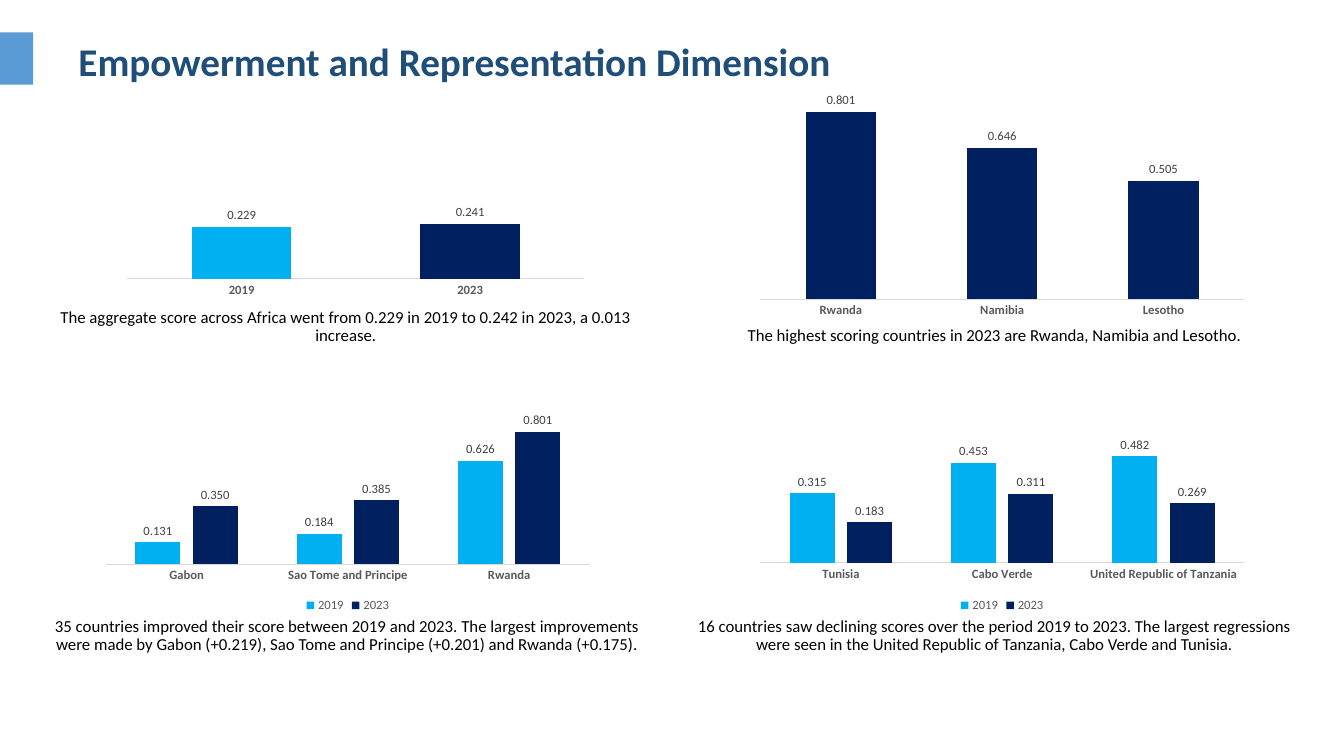
"""Build the Empowerment and Representation Dimension slide."""
from pptx import Presentation
from pptx.chart.data import CategoryChartData as Data
from pptx.dml.color import RGBColor as RGB
from pptx.enum.chart import XL_CHART_TYPE as Kind, XL_LABEL_POSITION as Spot
from pptx.enum.chart import XL_LEGEND_POSITION as Side, XL_TICK_MARK as Tick
from pptx.enum.shapes import MSO_SHAPE as Form
from pptx.enum.text import MSO_ANCHOR as Anchor, PP_ALIGN as Align
from pptx.util import Inches, Pt

TITLE = "Empowerment and Representation Dimension"
NOTES = [
    (0.3, 0.93, 6.26, 2.54, "The aggregate score across Africa went from 0.229 in 2019 "
     "to 0.242 in 2023, a 0.013 increase."),
    (0.33, 3.61, 6.23, 2.93, "35 countries improved their score between 2019 and 2023. "
     "The largest improvements were made by Gabon (+0.219), Sao Tome and Principe "
     "(+0.201) and Rwanda (+0.175)."),
    (6.75, 0.93, 6.23, 2.54, "The highest scoring countries in 2023 are Rwanda, "
     "Namibia and Lesotho."),
    (6.75, 3.61, 6.23, 2.93, "16 countries saw declining scores over the period 2019 to "
     "2023. The largest regressions were seen in the United Republic of Tanzania, "
     "Cabo Verde and Tunisia."),
]
CHARTS = [
    {"box": (7.44, 0.83, 5, 2.37), "top": 0.9, "cats": ["Rwanda", "Namibia", "Lesotho"],
     "rows": {"2023": [0.801, 0.646, 0.505]}},
    {"box": (0.95, 4.08, 5, 2.04), "top": 0.9,
     "cats": ["Gabon", "Sao Tome and Principe", "Rwanda"],
     "rows": {"2019": [0.131, 0.184, 0.626], "2023": [0.35, 0.385, 0.801]}},
    {"box": (1.17, 0.46, 4.72, 2.54), "top": 1, "cats": ["2019", "2023"],
     "rows": {"Score": [0.229, 0.241]}},
    {"box": (7.44, 3.34, 5, 2.78), "top": 1,
     "cats": ["Tunisia", "Cabo Verde", "United Republic of Tanzania"],
     "rows": {"2019": [0.315, 0.453, 0.482], "2023": [0.183, 0.311, 0.269]}},
]
THEME = {
    "tab": "5B9BD5", "axis": "D9D9D9",
    "years": {"2019": "00B0F0", "2023": "002060"},
    "title": {"name": "Calibri", "size": 28, "bold": True, "color": "1F4E79"},
    "note": {"name": "Calibri", "size": 12, "color": "000000"},
    "chart": {"name": "Calibri", "size": 10, "color": "000000"},
    "cats": {"name": "Calibri", "size": 9, "bold": True, "color": "595959"},
    "key": {"name": "Calibri", "size": 9, "color": "595959"},
    "label": {"name": "Calibri", "size": 9, "color": "404040"},
}


def apply(item, **vals):
    for key, val in vals.items():
        setattr(item, key, val)


def style(font, look):
    for key, val in look.items():
        if key == "color":
            font.color.rgb = RGB.from_string(val)
        else:
            setattr(font, key, Pt(val) if key == "size" else val)


def paint(fill, tone):
    fill.solid()
    fill.fore_color.rgb = RGB.from_string(tone)


def write(slide, box, text, look, frame={}, para={}):
    body = slide.shapes.add_textbox(*map(Inches, box)).text_frame
    apply(body, word_wrap=True, **frame)
    line = body.paragraphs[0]
    apply(line, **para)
    run = line.add_run()
    run.text = text
    style(run.font, look)


def plot(slide, box, top, cats, rows):
    data = Data(number_format="0.000")
    data.categories = cats
    for name, vals in rows.items():
        data.add_series(name, vals)
    chart = slide.shapes.add_chart(
        Kind.COLUMN_CLUSTERED, *map(Inches, box), data).chart
    apply(chart, has_title=False, has_legend=len(rows) > 1)
    style(chart.font, THEME["chart"])
    if chart.has_legend:
        apply(chart.legend, position=Side.BOTTOM, include_in_layout=False)
        style(chart.legend.font, THEME["key"])
    apply(chart.value_axis, visible=False, has_major_gridlines=False,
          minimum_scale=0, maximum_scale=top, major_unit=0.1)
    axis = chart.category_axis
    apply(axis, major_tick_mark=Tick.NONE, minor_tick_mark=Tick.NONE,
          has_major_gridlines=False)
    style(axis.tick_labels.font, THEME["cats"])
    axis.format.line.width = Pt(0.75)
    paint(axis.format.line.fill, THEME["axis"])
    bars = chart.plots[0]
    apply(bars, gap_width=130, overlap=-27, vary_by_categories=False)
    years = THEME["years"]
    for row in bars.series:
        if row.name in years:
            paint(row.format.fill, years[row.name])
        else:
            for spot, cat in enumerate(cats):
                paint(row.points[spot].format.fill, years[cat])
        apply(row.data_labels, show_value=True, position=Spot.OUTSIDE_END,
              number_format="0.000", number_format_is_linked=False)
        style(row.data_labels.font, THEME["label"])


def main():
    deck = Presentation()
    apply(deck, slide_width=Inches(13.33), slide_height=Inches(7.5))
    slide = deck.slides.add_slide(deck.slide_layouts[6])
    tab = slide.shapes.add_shape(Form.RECTANGLE, *map(Inches, (0, 0.32, 0.33, 0.52)))
    tab.shadow.inherit = False
    paint(tab.fill, THEME["tab"])
    tab.line.fill.background()
    write(slide, (0.68, 0.32, 10.72, 0.57), TITLE, THEME["title"])
    for *box, text in NOTES:
        write(slide, box, text, THEME["note"], {"vertical_anchor": Anchor.BOTTOM},
              {"alignment": Align.CENTER, "line_spacing": 0.9, "space_before": Pt(10)})
    for chart in CHARTS:
        plot(slide, **chart)
    deck.save("out.pptx")


if __name__ == "__main__":
    main()
